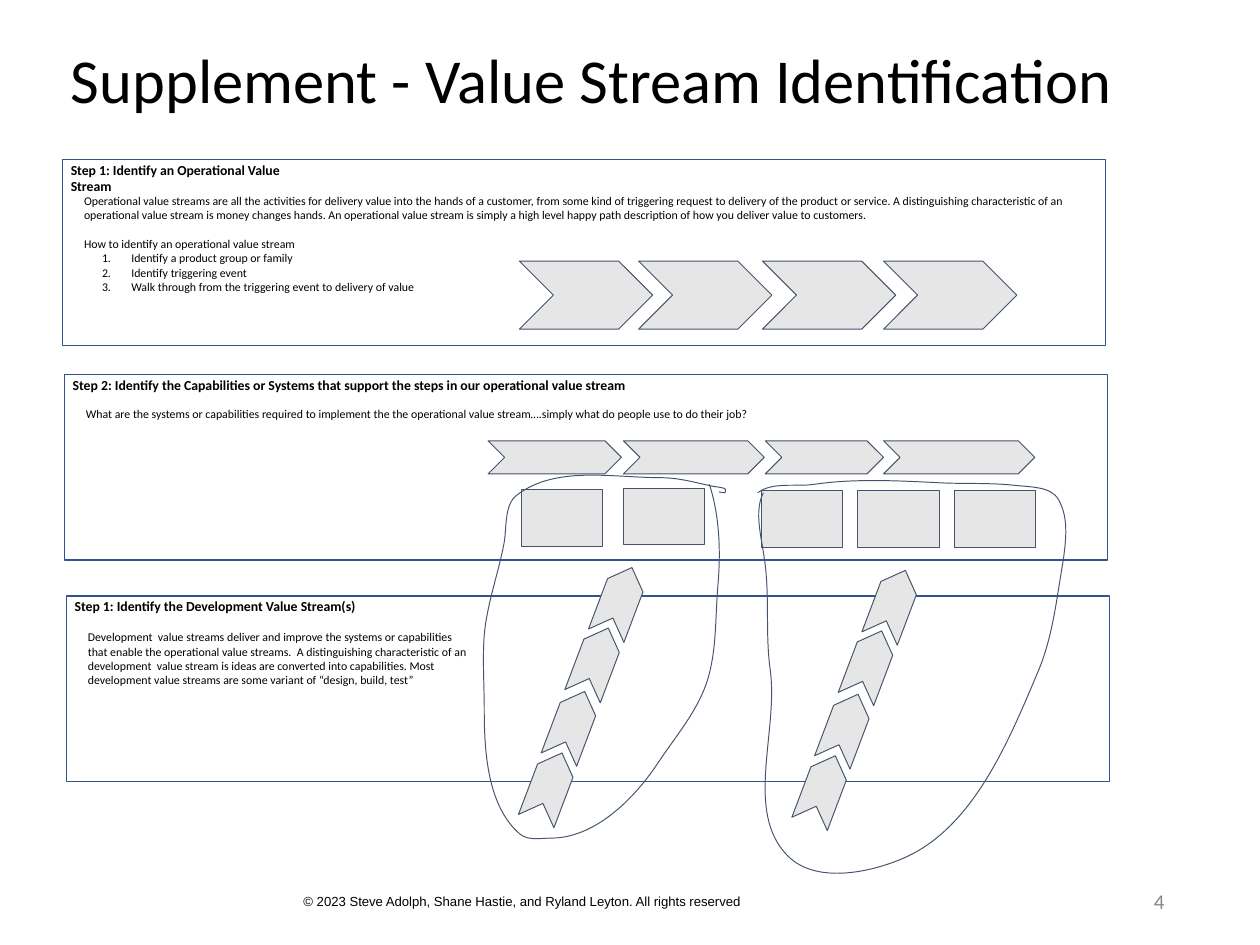
from lxml.etree import SubElement
from pptx import Presentation
from pptx.dml.color import RGBColor
from pptx.enum.shapes import MSO_SHAPE as Preset
from pptx.enum.text import MSO_ANCHOR as Anchor, MSO_AUTO_SIZE as AutoSize, PP_ALIGN as Align
from pptx.oxml.ns import qn
from pptx.util import Inches, Pt

BLACK = RGBColor(0x00, 0x00, 0x00)
GRAY = RGBColor(0x88, 0x88, 0x88)
PANEL_LINE = RGBColor(0x31, 0x53, 0x8F)
SHAPE_LINE = RGBColor(0x44, 0x54, 0x6A)
SHAPE_FILL = RGBColor(0xE7, 0xE6, 0xE6)

PANEL_WIDTH, PANEL_HEIGHT = 11.03, 1.96

LEFT_LOOP = (5.11, 5.02, 2.57, 3.85), (7.5, 5.12), [
    (7.61, 5.46, 7.62, 5.84, 7.59, 6.19), (7.56, 6.54, 7.58, 6.89, 7.47, 7.22),
    (7.36, 7.54, 7.13, 7.8, 6.94, 8.09), (6.69, 8.46, 6.28, 8.86, 5.83, 8.86),
    (5.72, 8.86, 5.59, 8.89, 5.5, 8.82), (5.16, 8.53, 5.12, 7.97, 5.12, 7.51),
    (5.12, 7.24, 5.1, 6.97, 5.12, 6.71), (5.15, 6.38, 5.27, 6.06, 5.33, 5.74),
    (5.36, 5.56, 5.33, 5.33, 5.47, 5.23), (5.88, 4.92, 6.48, 5.05, 6.99, 5.05),
    (7.17, 5.05, 7.35, 5.1, 7.53, 5.14), (7.58, 5.15, 7.7, 5.15, 7.67, 5.2),
    (7.66, 5.22, 7.63, 5.2, 7.6, 5.2)]
RIGHT_LOOP = (8.01, 5.08, 3.26, 4.15), (8.01, 5.21), [
    (8.17, 5.09, 8.41, 5.15, 8.61, 5.12), (9.02, 5.06, 9.44, 5.08, 9.86, 5.1),
    (10.15, 5.12, 10.44, 5.1, 10.72, 5.13), (10.89, 5.15, 11.11, 5.14, 11.19, 5.28),
    (11.3, 5.47, 11.27, 5.71, 11.24, 5.93), (11.17, 6.33, 11.13, 6.74, 10.97, 7.11),
    (10.65, 7.87, 10.27, 8.79, 9.51, 9.09), (9.14, 9.24, 8.61, 9.33, 8.33, 9.05),
    (7.86, 8.58, 8.24, 7.72, 8.14, 7.06), (8.09, 6.67, 8.14, 6.28, 8.08, 5.9),
    (8.05, 5.67, 7.97, 5.41, 8.07, 5.21)]


def write(para, text, size=9, font="Calibri", color=BLACK, bold=False, align=Align.LEFT):
    para.alignment = align
    span = para.add_run()
    span.text = text
    span.font.size, span.font.name, span.font.bold = Pt(size), font, bold
    span.font.color.rgb = color


def add_text(page, box, *lines, inset=0.05, anchor=Anchor.TOP, **style):
    """Add a text box with one paragraph per line; return its paragraphs."""
    frame = page.shapes.add_textbox(*map(Inches, box)).text_frame
    frame.word_wrap = True
    frame.vertical_anchor = anchor
    frame.margin_top = frame.margin_bottom = Inches(inset)
    for index, line in enumerate(lines):
        write(frame.add_paragraph() if index else frame.paragraphs[0], line, **style)
    return frame.paragraphs


def style_shape(shape, fill=None, line=SHAPE_LINE, width=0.75):
    shape.shadow.inherit = False
    if fill is None:
        shape.fill.background()
    else:
        shape.fill.solid()
        shape.fill.fore_color.rgb = fill
    shape.line.color.rgb = line
    shape.line.width = Pt(width)


def add_block(page, preset, box, rotation=0):
    block = page.shapes.add_shape(preset, *map(Inches, box))
    block.rotation = rotation
    style_shape(block, SHAPE_FILL)


def number_item(para):
    properties = para._p.get_or_add_pPr()
    properties.set("marL", str(Inches(0.5)))
    properties.set("indent", str(Inches(-0.31)))
    SubElement(properties, qn("a:buFont"), typeface="+mj-lt")
    SubElement(properties, qn("a:buAutoNum"), type="arabicPeriod")


def add_panel(page, left, top, heading, heading_box, *lines, text_box):
    """Add an outlined step with its heading and text; return the text's paragraphs.

    heading_box and text_box each give a width and a height.
    """
    panel = page.shapes.add_shape(
        Preset.RECTANGLE, *map(Inches, (left, top, PANEL_WIDTH, PANEL_HEIGHT)))
    style_shape(panel, line=PANEL_LINE, width=1)
    add_text(page, (left - 0.01, top - 0.03, *heading_box), heading, size=10.5, bold=True)
    return add_text(page, (left + 0.13, top + 0.26, *text_box), *lines, inset=0.1)


def add_operational_step(page, left, top):
    paras = add_panel(
        page, left, top, "Step 1: Identify an Operational Value Stream", (2.84, 0.45),
        "Operational value streams are all the activities for delivery value into the hands "
        "of a customer, from some kind of triggering request to delivery of the product or "
        "service. A distinguishing characteristic of an operational value stream is money "
        "changes hands. An operational value stream is simply a high level happy path "
        "description of how you deliver value to customers.",
        "How to identify an operational value stream",
        "Identify a product group or family",
        "Identify triggering event",
        "Walk through from the triggering event to delivery of value",
        text_box=(10.8, 1.72))
    paras[1].space_before = Pt(11)
    for para in paras[2:]:
        number_item(para)
    for offset in (4.83, 6.09, 7.4, 8.68):
        add_block(page, Preset.CHEVRON, (left + offset, top + 1.07, 1.41, 0.72))


def add_capability_step(page, left, top):
    add_panel(
        page, left, top,
        "Step 2: Identify the Capabilities or Systems that support the steps in our "
        "operational value stream", (6.99, 0.28),
        "What are the systems or capabilities required to implement the the operational "
        "value stream….simply what do people use to do their job?",
        text_box=(10.8, 0.35))
    for offset, width in ((4.48, 1.41), (5.91, 1.49), (7.41, 1.25), (8.66, 1.6)):
        add_block(page, Preset.CHEVRON, (left + offset, top + 0.7, width, 0.35))
    for offset, drop in ((4.83, 1.22), (5.91, 1.2), (7.37, 1.23), (8.39, 1.23), (9.41, 1.23)):
        add_block(page, Preset.RECTANGLE, (left + offset, top + drop, 0.86, 0.6))


def add_development_step(page, left, top):
    add_panel(
        page, left, top, "Step 1: Identify the Development Value Stream(s)", (6.35, 0.28),
        "Development  value streams deliver and improve the systems or capabilities that "
        "enable the operational value streams.  A distinguishing characteristic of an "
        "development  value stream is ideas are converted into capabilities. Most "
        "development value streams are some variant of “design, build, test”",
        text_box=(4.25, 1.41))
    for offset, drop in ((4.72, 1.82), (7.61, 1.85)):
        for shift, rise in ((0, 0), (0.24, 0.65), (0.49, 1.32), (0.74, 1.96)):
            add_block(page, Preset.CHEVRON,
                      (left + offset + shift, top + drop - rise, 0.77, 0.4), rotation=290.7)


def add_loop(page, box, start, curves):
    """Draw cubic curves, each given as two control points and an end point."""
    left, top, width, height = map(Inches, box)
    builder = page.shapes.build_freeform(*map(Inches, start))
    builder.add_line_segments([tuple(map(Inches, curve[4:])) for curve in curves], close=False)
    loop = builder.convert_to_shape()
    loop.left, loop.top, loop.width, loop.height = left, top, width, height
    outline = next(loop._element.iter(qn("a:path")))
    outline.set("w", str(width))
    outline.set("h", str(height))
    for segment in list(outline):
        outline.remove(segment)
    for tag, values in [("a:moveTo", start)] + [("a:cubicBezTo", curve) for curve in curves]:
        segment = SubElement(outline, qn(tag))
        for x, y in zip(values[::2], values[1::2]):
            SubElement(segment, qn("a:pt"), x=str(Inches(x) - left), y=str(Inches(y) - top))
    style_shape(loop)


def set_title(page, box, text):
    title = page.shapes.title
    title.left, title.top, title.width, title.height = map(Inches, box)
    frame = title.text_frame
    frame.auto_size = AutoSize.NONE
    frame.vertical_anchor = Anchor.MIDDLE
    frame.paragraphs[0].line_spacing = 0.9
    write(frame.paragraphs[0], text, size=47.6)


def add_footer(page):
    add_text(page, (3.11, 9.33, 10.21, 0.39),
             "© 2023 Steve Adolph, Shane Hastie, and Ryland Leyton. All rights reserved",
             inset=0.1, anchor=Anchor.MIDDLE, size=10, font="Arial")
    add_text(page, (9.41, 9.26, 3, 0.53), "4", anchor=Anchor.MIDDLE,
             size=16, color=GRAY, align=Align.RIGHT)


def main():
    deck = Presentation()
    deck.slide_width, deck.slide_height = Inches(13.32), Inches(9.99)
    page = deck.slides.add_slide(deck.slide_layouts[5])
    set_title(page, (0.65, 0.37, 11.49, 1.01), "Supplement - Value Stream Identification")
    add_operational_step(page, 0.66, 1.69)
    add_capability_step(page, 0.68, 3.96)
    add_development_step(page, 0.7, 6.3)
    for box, start, curves in (LEFT_LOOP, RIGHT_LOOP):
        add_loop(page, box, start, curves)
    add_footer(page)
    deck.save("out.pptx")


if __name__ == "__main__":
    main()
